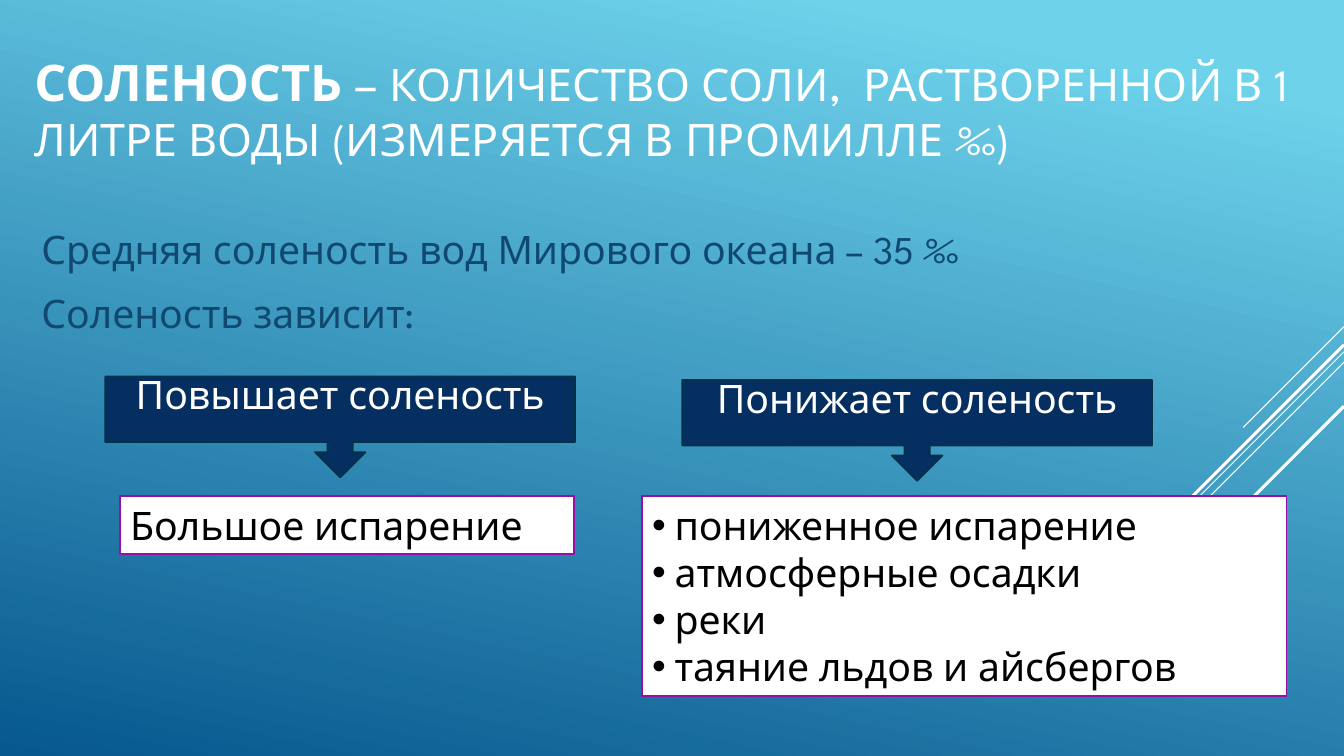
from pptx import Presentation
from pptx.dml.color import RGBColor
from pptx.enum.shapes import MSO_CONNECTOR as Connector, MSO_SHAPE as Shape
from pptx.enum.text import MSO_ANCHOR as Anchor, MSO_AUTO_SIZE as AutoSize, PP_ALIGN as Align
from pptx.oxml.ns import qn
from pptx.util import Pt
from lxml.etree import SubElement

COLORS = {
    "sky": "6ED2EB", "sea": "06588E", "white": "FFFFFF", "black": "000000",
    "body": "0F496F", "navy": "052F61", "navy_line": "043148", "violet": "990EA5",
}
FONT = "League Spartan"
WIDTH, HEIGHT = 960, 540

TITLE = [
    ("СОЛЕНОСТЬ", 36, True),
    (" – ", 36, False),
    ("КОЛИЧЕСТВО СОЛИ,  РАСТВОРЕННОЙ В 1 ЛИТРЕ ВОДЫ (ИЗМЕРЯЕТСЯ В ПРОМИЛЛЕ ‰)", 32, False),
]
FACTS = ["Средняя соленость вод Мирового океана – 35 ‰", "Соленость зависит:"]
CALLOUTS = [
    ("Повышает соленость", (75.3, 269)),
    ("Понижает соленость", (487.4, 271.4)),
]
CAUSES = [
    (["Большое испарение"], (85.8, 354.3, 324, 41.2), False),
    (["пониженное испарение", "атмосферные осадки", "реки", "таяние льдов и айсбергов"],
     (458.8, 354.3, 460.3, 143), True),
]
DIAGONALS = [
    (233.3, 72, 0.75), (251.3, 234.8, 0.75), (258.7, 149.3, 0.75),
    (246.3, 137.7, 2.25), (290.2, 100, 2.25),
]


def color(name):
    return RGBColor.from_string(COLORS[name])


def set_values(target, values):
    for name, value in values.items():
        setattr(target, name, value)


def place(shape, left, top, width, height):
    set_values(shape, {"left": Pt(left), "top": Pt(top), "width": Pt(width), "height": Pt(height)})


def add_span(para, text, size, tint, bold=False):
    span = para.add_run()
    span.text = text
    set_values(span.font, {"name": FONT, "size": Pt(size), "bold": bold})
    span.font.color.rgb = color(tint)


def set_bullet(para, mark, indent):
    props = para._p.get_or_add_pPr()
    props.set("marL", str(Pt(indent)))
    props.set("indent", str(-Pt(indent)))
    if mark:
        SubElement(props, qn("a:buFont"), typeface="Arial")
        SubElement(props, qn("a:buChar"), char=mark)
    else:
        SubElement(props, qn("a:buNone"))


def add_lines(frame, lines, tint, align, mark=None, indent=0, before=0, after=0):
    for index, text in enumerate(lines):
        para = frame.add_paragraph() if index else frame.paragraphs[0]
        set_values(para, {"alignment": align, "space_after": Pt(after),
                          "space_before": Pt(before if index else 0)})
        set_bullet(para, mark, indent)
        add_span(para, text, 28, tint)


def add_box(page, kind, bounds, fill, line):
    box = page.shapes.add_shape(kind, *map(Pt, bounds))
    box.shadow.inherit = False
    box.fill.solid()
    box.fill.fore_color.rgb = color(fill)
    box.line.color.rgb = color(line)
    box.line.width = Pt(1.25)
    box.text_frame.word_wrap = True
    return box


def add_diagonal(page, top, run, weight):
    line = page.shapes.add_connector(
        Connector.STRAIGHT, Pt(WIDTH), Pt(top), Pt(WIDTH - run), Pt(top + run))
    line.line.color.rgb = color("white")
    line.line.width = Pt(weight)
    SubElement(line._element.spPr, qn("a:effectLst"))


def main():
    deck = Presentation()
    set_values(deck, {"slide_width": Pt(WIDTH), "slide_height": Pt(HEIGHT)})
    page = deck.slides.add_slide(deck.slide_layouts[1])

    backdrop = page.background.fill
    backdrop.gradient()
    backdrop.gradient_angle = 258
    for stop, (position, tint) in zip(backdrop.gradient_stops, [(0.1, "sky"), (1, "sea")]):
        stop.position = position
        stop.color.rgb = color(tint)

    for diagonal in DIAGONALS:
        add_diagonal(page, *diagonal)

    title = page.shapes.title
    place(title, 17.3, 18, 933, 118.8)
    set_values(title.text_frame, {"auto_size": AutoSize.NONE, "vertical_anchor": Anchor.MIDDLE,
                                  "word_wrap": True})
    heading = title.text_frame.paragraphs[0]
    heading.alignment = Align.LEFT
    for text, size, bold in TITLE:
        add_span(heading, text, size, "white", bold)

    body = page.placeholders[1]
    place(body, 22.3, 129.6, 827.3, 170.6)
    set_values(body.text_frame, {"auto_size": AutoSize.NONE, "vertical_anchor": Anchor.TOP,
                                 "word_wrap": True, "margin_top": Pt(31.5)})
    add_lines(body.text_frame, FACTS, "body", Align.LEFT, before=5.6, after=6)

    for text, corner in CALLOUTS:
        box = add_box(page, Shape.DOWN_ARROW_CALLOUT, (*corner, 335.5, 72), "navy", "navy_line")
        set_values(box.text_frame, {"vertical_anchor": Anchor.MIDDLE, "margin_top": 0,
                                    "margin_bottom": Pt(21.6)})
        add_lines(box.text_frame, [text], "white", Align.CENTER)

    for lines, bounds, bulleted in CAUSES:
        box = add_box(page, Shape.RECTANGLE, bounds, "white", "violet")
        box.text_frame.vertical_anchor = Anchor.TOP
        mark, indent = ("•", 16) if bulleted else (None, 0)
        add_lines(box.text_frame, lines, "black", Align.LEFT, mark, indent)

    deck.save("out.pptx")


if __name__ == "__main__":
    main()
